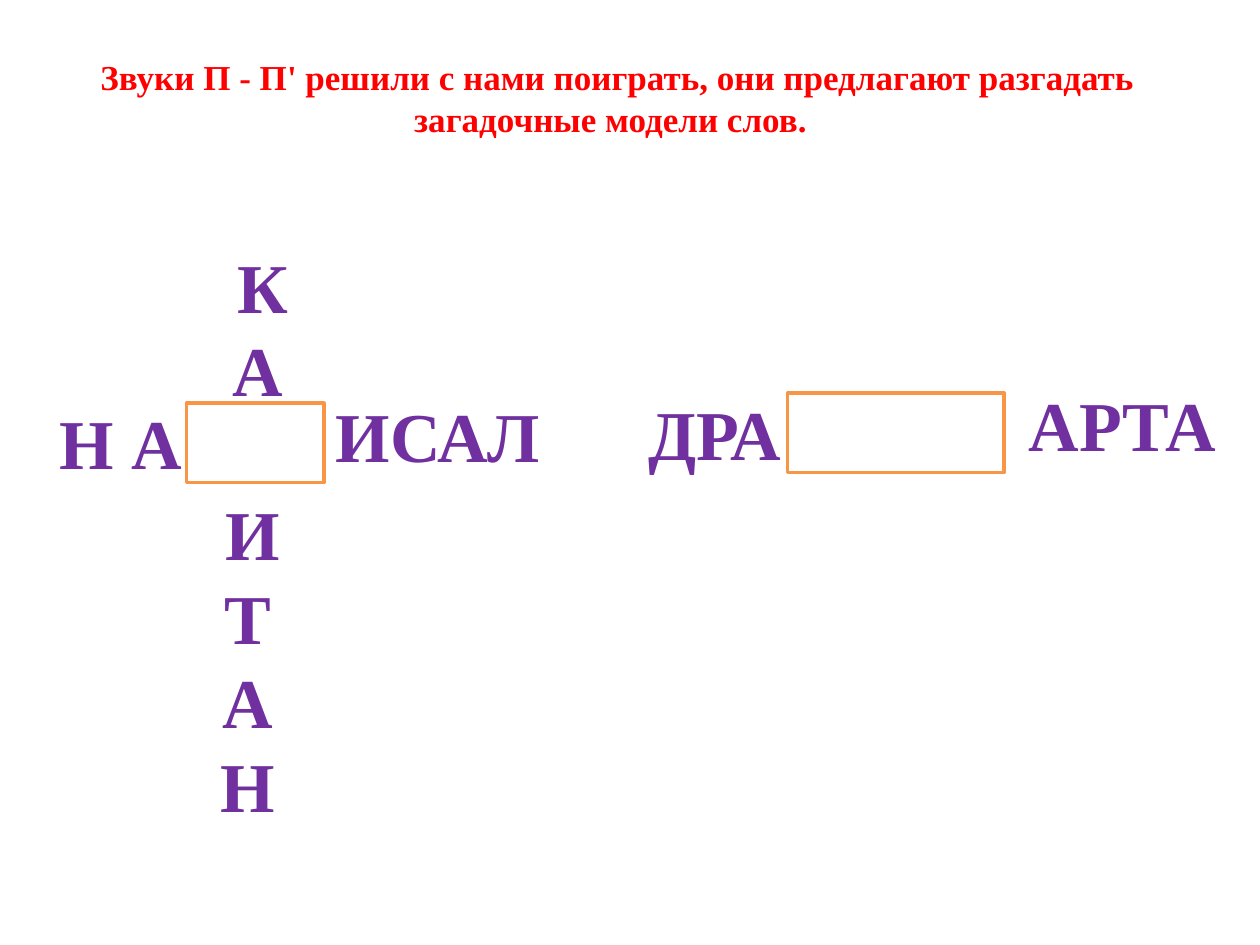
from pptx import Presentation
from pptx.dml.color import RGBColor
from pptx.enum.shapes import MSO_SHAPE
from pptx.enum.text import MSO_ANCHOR, PP_ALIGN
from pptx.util import Inches, Pt

COLORS = {"title": "FF0000", "letters": "7030A0", "frame": "F79646", "paper": "FFFFFF"}
FONT = "Times New Roman"
COLS, ROWS = 100, 75


class Puzzle:
    """Slide with places given in columns and rows of a 100 by 75 grid."""

    def __init__(self, prs):
        self.col, self.row = prs.slide_width / COLS, prs.slide_height / ROWS
        self.s = prs.slides.add_slide(prs.slide_layouts[6])

    def place(self, x, y, w, h):
        return int(x * self.col), int(y * self.row), int(w * self.col), int(h * self.row)

    def color(self, name):
        return RGBColor.from_string(COLORS[name])

    def text(self, lines, x, y, w, h, size=40, color="letters", first=1.9, rest=1.1):
        """Centred lines; first and rest are first-line indents in columns."""
        tf = self.s.shapes.add_textbox(*self.place(x, y, w, h)).text_frame
        tf.word_wrap = True
        tf.vertical_anchor = MSO_ANCHOR.MIDDLE
        for i, line in enumerate(lines):
            p = tf.add_paragraph() if i else tf.paragraphs[0]
            p.alignment = PP_ALIGN.CENTER
            pPr = p._p.get_or_add_pPr()
            pPr.set("marL", "0")
            pPr.set("indent", str(int((rest if i else first) * self.col)))
            r = p.add_run()
            r.text = line
            r.font.name, r.font.size, r.font.bold = FONT, Pt(size), True
            r.font.color.rgb = self.color(color)

    def frame(self, x, y, w, h):
        sp = self.s.shapes.add_shape(MSO_SHAPE.RECTANGLE, *self.place(x, y, w, h))
        sp.shadow.inherit = False
        sp.fill.solid()
        sp.fill.fore_color.rgb = self.color("paper")
        sp.line.color.rgb = self.color("frame")
        sp.line.width = Pt(2)


def main():
    prs = Presentation()
    prs.slide_width, prs.slide_height = Inches(10), Inches(7.5)
    puzzle = Puzzle(prs)
    puzzle.text(["Звуки П - П' решили с нами поиграть, они предлагают разгадать "
                 "загадочные модели слов."],
                5.5, 3.9, 85.9, 7.7, size=20, color="title", first=1.1)

    # Crossed words on the left
    puzzle.frame(14.8, 32, 10.9, 6.3)
    puzzle.text("КА", 15.6, 18.7, 8.6, 14.5)
    puzzle.text("ИТАН", 14.8, 38.3, 8.6, 27.9)
    puzzle.text(["Н А"], 1.6, 31.2, 14.1, 7.7)
    puzzle.text(["ИСАЛ"], 25, 30.6, 19.5, 7.7, first=0)

    # Joined words on the right
    puzzle.frame(62.5, 31.2, 17.2, 6.3)
    puzzle.text(["ДРА"], 48.4, 30.5, 14.8, 7.7)
    puzzle.text(["АРТА"], 79.7, 29.8, 18.8, 7.7, first=0)
    prs.save("out.pptx")


if __name__ == "__main__":
    main()
